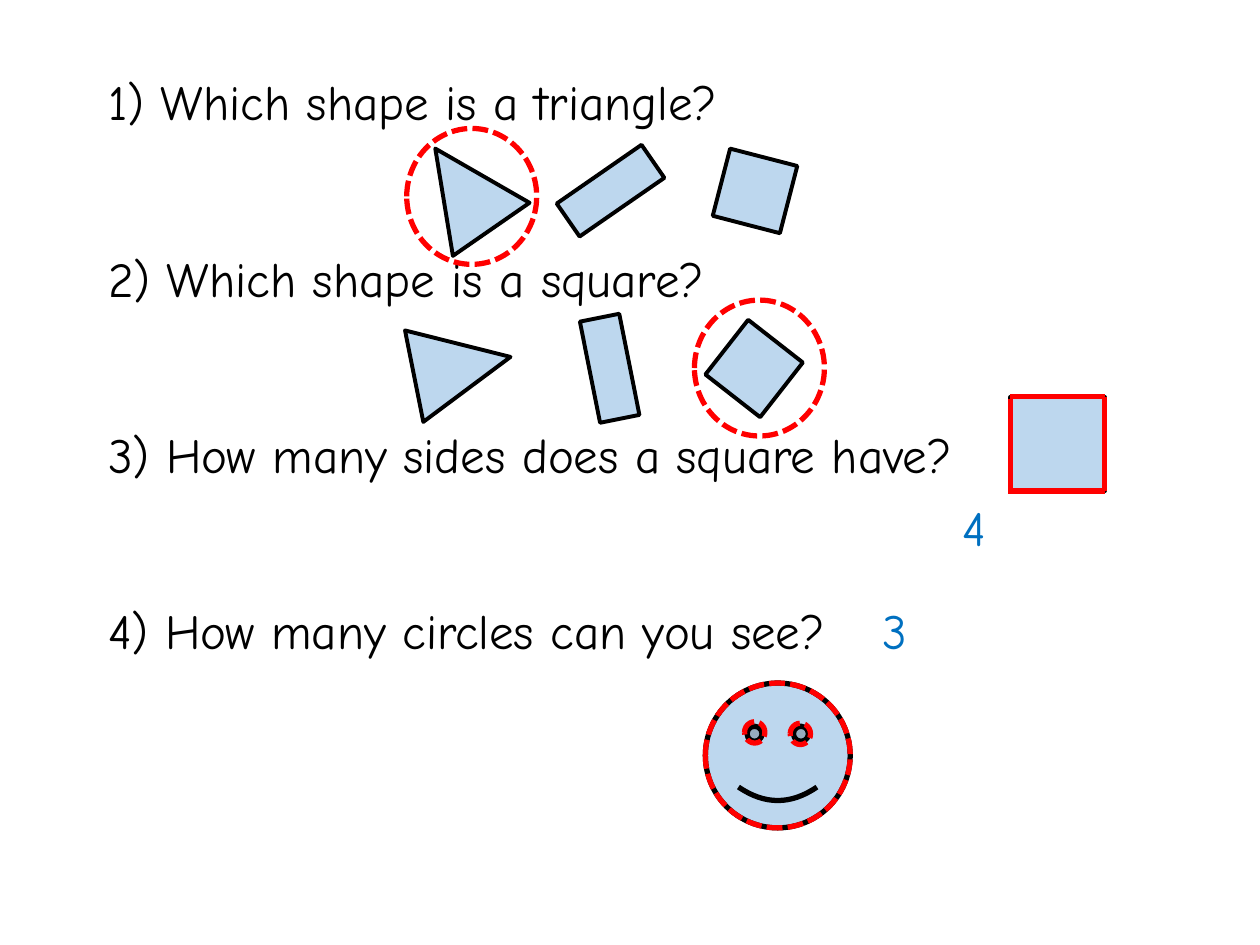
from pptx import Presentation
from pptx import util as u
from pptx.dml.color import RGBColor
from pptx.enum import dml, shapes, text
from pptx.oxml.ns import qn
from lxml import etree

BLACK = RGBColor(0x00, 0x00, 0x00)
PALE = RGBColor(0xBD, 0xD7, 0xEE)
RED = RGBColor(0xFF, 0x00, 0x00)
BLUE = RGBColor(0x00, 0x70, 0xC0)
FONT = "Comic Neue"
KIND = shapes.MSO_SHAPE
ASKS = [
    "1) Which shape is a triangle?",
    "2) Which shape is a square?",
    "3) How many sides does a square have?",
    "4) How many circles can you see?",
]


def write(slide, box, lines, color, align, gap=0):
    """Write one paragraph per line in a text box, with a gap in points between."""
    frame = slide.shapes.add_textbox(*map(u.Cm, box)).text_frame
    frame.word_wrap = True
    for i, line in enumerate(lines):
        para = frame.paragraphs[0] if i == 0 else frame.add_paragraph()
        para.alignment = align
        if i:
            para.space_before = u.Pt(gap)
        run = para.add_run()
        run.text = line
        run.font.name = FONT
        run.font.size = u.Pt(28)
        run.font.color.rgb = color


def figure(slide, kind, box, turn=0, width=2.25):
    """Draw a pale shape with a black outline."""
    shape = slide.shapes.add_shape(kind, *map(u.Cm, box))
    shape.shadow.inherit = False
    shape.rotation = turn
    shape.fill.solid()
    shape.fill.fore_color.rgb = PALE
    shape.line.color.rgb = BLACK
    shape.line.width = u.Pt(width)


def ring(slide, box):
    """Draw a dashed red ring."""
    shape = slide.shapes.add_shape(KIND.OVAL, *map(u.Cm, box))
    shape.shadow.inherit = False
    shape.fill.background()
    shape.line.color.rgb = RED
    shape.line.width = u.Pt(3)
    shape.line.dash_style = dml.MSO_LINE.SQUARE_DOT


def side(slide, *ends):
    """Draw a red line between two points."""
    line = slide.shapes.add_connector(shapes.MSO_CONNECTOR.STRAIGHT, *map(u.Cm, ends))
    line.line.color.rgb = RED
    line.line.width = u.Pt(3)
    etree.SubElement(line._element.spPr, qn("a:effectLst"))


def choice(slide, left, top, turns, mark):
    """Lay out a triangle, a bar and a square, and ring the right one."""
    parts = [
        (KIND.ISOSCELES_TRIANGLE, 0, 0, 1.88, 1.98),
        (KIND.RECTANGLE, 2.87, 0.62, 2.08, 0.81),
        (KIND.RECTANGLE, 6.12, 0.33, 1.4, 1.4),
    ]
    for (kind, x, y, w, h), turn in zip(parts, turns):
        figure(slide, kind, (left + x, top + y, w, h), turn)
    x, y = mark
    ring(slide, (left + x, top + y, 2.62, 2.74))


def square(slide, left, top, size):
    """Draw a square with its four sides traced in red."""
    figure(slide, KIND.RECTANGLE, (left, top, size, size))
    right, low = left + size, top + size
    side(slide, left, top, right, top)
    side(slide, left, low, right, low)
    side(slide, right, top, right, low)
    side(slide, left, top + 0.05, left, low + 0.05)


def face(slide, left, top, size):
    """Draw a smiling face with its three circles ringed."""
    figure(slide, KIND.SMILEY_FACE, (left, top, size, size), width=3)
    for x, y in [(0.79, 0.78), (1.71, 0.81)]:
        ring(slide, (left + x, top + y, 0.41, 0.43))
    ring(slide, (left, top, size, size))


def main():
    """Build the quiz slide."""
    deck = Presentation()
    deck.slide_width, deck.slide_height = u.Cm(25.4), u.Cm(19.05)
    slide = deck.slides.add_slide(deck.slide_layouts[6])
    side_by, mid = text.PP_ALIGN.LEFT, text.PP_ALIGN.CENTER
    write(slide, (1.93, 1.32, 20.83, 12.22), ASKS, BLACK, side_by, 67.2)
    choice(slide, 8.4, 2.82, (325.3, 325.3, 14.5), (-0.2, -0.23))
    choice(slide, 8.38, 6.4, (78.7, 78.7, 128), (5.62, -0.35))
    square(slide, 20.37, 8, 1.9)
    face(slide, 14.22, 13.77, 2.92)
    write(slide, (18.72, 9.91, 1.83, 1.45), ["4"], BLUE, mid)
    write(slide, (17.12, 11.99, 1.83, 1.45), ["3"], BLUE, mid)
    deck.save("out.pptx")


if __name__ == "__main__":
    main()
